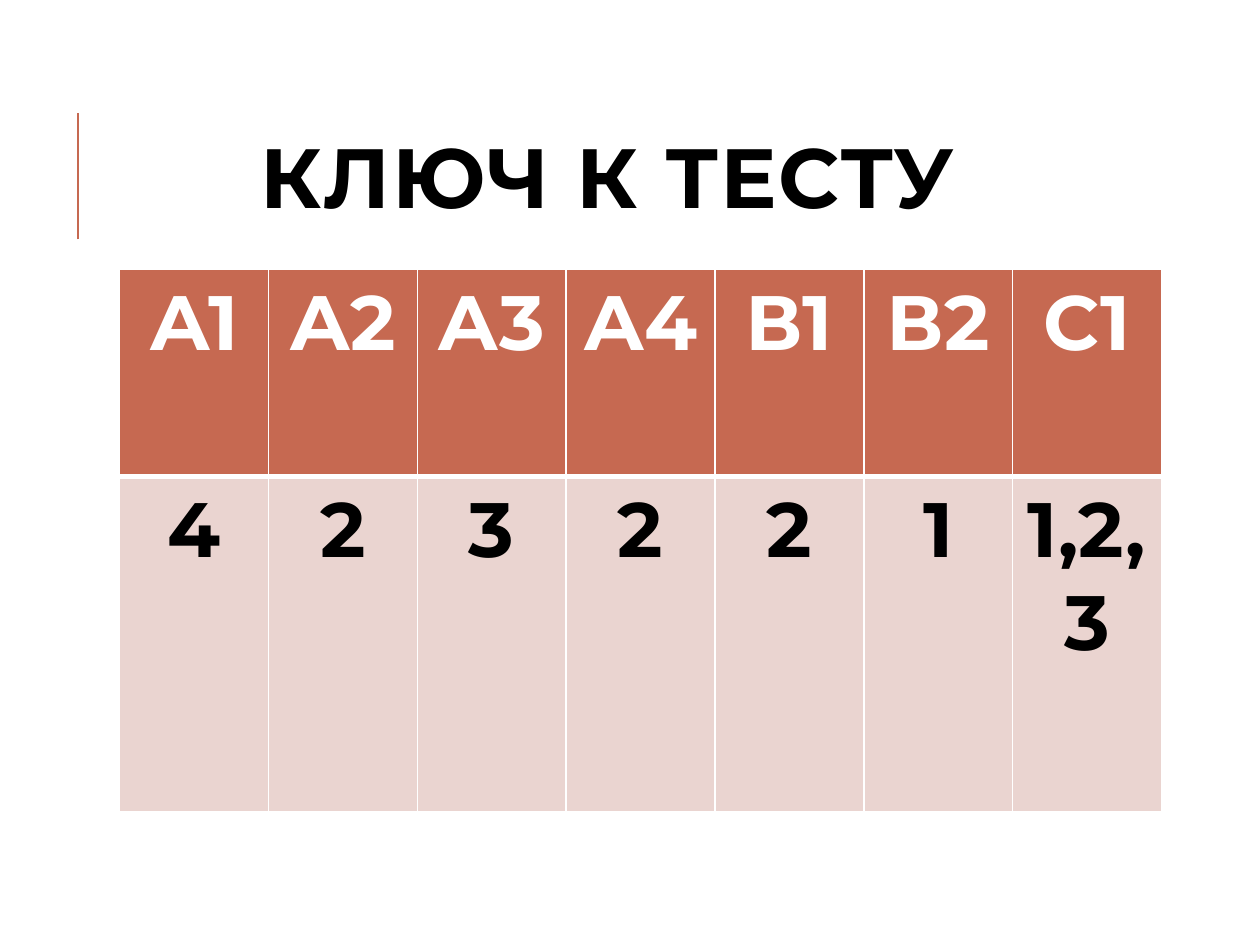
from dataclasses import dataclass

from lxml.etree import SubElement
from pptx import Presentation
from pptx.dml.color import RGBColor
from pptx.enum.shapes import MSO_CONNECTOR
from pptx.enum.text import MSO_ANCHOR, PP_ALIGN
from pptx.oxml.ns import qn
from pptx.util import Inches, Pt


@dataclass(frozen=True)
class Theme:
    font: str = "Montserrat"
    accent: str = "C66951"
    tint: str = "EAD4D0"
    light: str = "FFFFFF"
    dark: str = "000000"
    title_size: int = 48
    cell_size: int = 44


THEME = Theme()
QUESTIONS = ["А1", "А2", "А3", "А4", "В1", "В2", "С1"]
ANSWERS = ["4", "2", "3", "2", "2", "1", "1,2,3"]


def style_paragraph(para, size, color):
    para.alignment = PP_ALIGN.CENTER
    para.font.name = THEME.font
    para.font.size = Pt(size)
    para.font.bold = True
    para.font.color.rgb = RGBColor.from_string(color)


def add_accent_line(slide, x, top, bottom):
    line = slide.shapes.add_connector(
        MSO_CONNECTOR.STRAIGHT, Inches(x), Inches(bottom), Inches(x), Inches(top))
    line.line.color.rgb = RGBColor.from_string(THEME.accent)
    line.line.width = Pt(1.5)
    SubElement(line._element.spPr, qn("a:effectLst"))


def set_title(slide, text):
    title = slide.shapes.title
    title.left, title.top = Inches(0.84), Inches(0.64)
    title.width, title.height = Inches(7.97), Inches(1.64)
    frame = title.text_frame
    frame.text = text
    frame.word_wrap = True
    frame.vertical_anchor = MSO_ANCHOR.MIDDLE
    para = frame.paragraphs[0]
    style_paragraph(para, THEME.title_size, THEME.dark)
    para.line_spacing = 0.8
    para.runs[0].font._element.set("spc", "100")


def set_borders(cell, bottom_width):
    properties = cell._tc.get_or_add_tcPr()
    widths = {"a:lnL": 1, "a:lnR": 1, "a:lnT": 1, "a:lnB": bottom_width}
    for tag, width in widths.items():
        border = SubElement(properties, qn(tag), w=str(Pt(width)))
        fill = SubElement(border, qn("a:solidFill"))
        SubElement(fill, qn("a:srgbClr"), val=THEME.light)


def fill_row(table, row, texts, fill, color, bottom_width):
    for column, text in enumerate(texts):
        cell = table.cell(row, column)
        cell.text = text
        style_paragraph(cell.text_frame.paragraphs[0], THEME.cell_size, color)
        # Borders come before the fill in the cell properties
        set_borders(cell, bottom_width)
        cell.fill.solid()
        cell.fill.fore_color.rgb = RGBColor.from_string(fill)


def add_answer_table(slide):
    table = slide.shapes.add_table(
        2, len(QUESTIONS), Inches(0.95), Inches(2.14), Inches(8.27), Inches(4.3)).table
    for row, height in zip(table.rows, (1.64, 2.66)):
        row.height = Inches(height)
    fill_row(table, 0, QUESTIONS, THEME.accent, THEME.light, 3)
    fill_row(table, 1, ANSWERS, THEME.tint, THEME.dark, 1)


def main():
    deck = Presentation()
    deck.slide_width, deck.slide_height = Inches(10), Inches(7.5)
    slide = deck.slides.add_slide(deck.slide_layouts[5])

    # Heading with its accent line
    add_accent_line(slide, 0.62, 0.9, 1.9)
    set_title(slide, "КЛЮЧ К ТЕСТУ")

    # Answer key
    add_answer_table(slide)

    deck.save("out.pptx")


if __name__ == "__main__":
    main()
